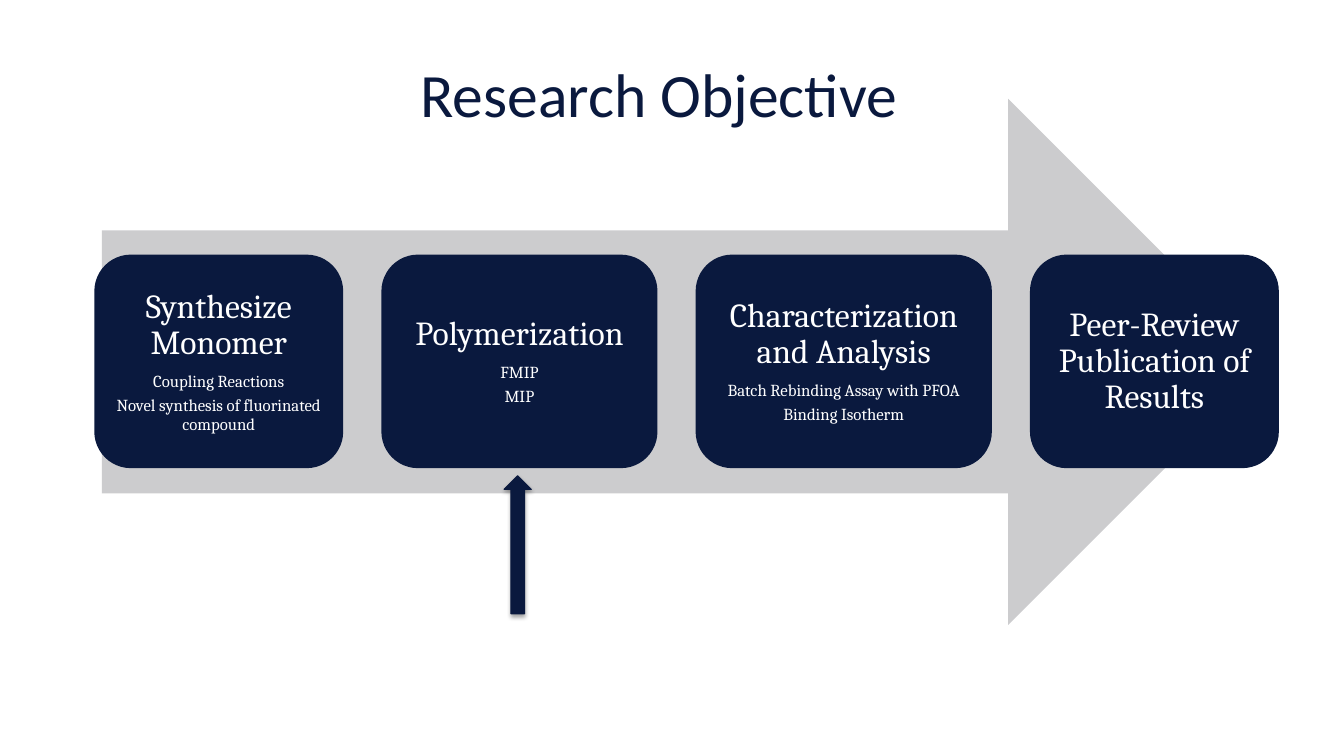
from lxml import etree
from pptx import Presentation
from pptx import util as u
from pptx.dml.color import RGBColor
from pptx.enum import shapes, text
from pptx.oxml.ns import qn

NAVY = "0A193E"
GREY = "CCCCCE"
WHITE = "FFFFFF"

STAGES = [
    (2.44, "Synthesize Monomer",
     ["Coupling Reactions", "Novel synthesis of fluorinated compound"]),
    (2.71, "Polymerization", ["FMIP", "MIP"]),
    (2.91, "Characterization and Analysis",
     ["Batch Rebinding Assay with PFOA", "Binding Isotherm"]),
    (2.44, "Peer-Review Publication of Results", []),
]


def color(value):
    return RGBColor.from_string(value)


def add_filled(slide, preset, box, fill, line_width=None):
    part = slide.shapes.add_shape(preset, *map(u.Inches, box))
    part.shadow.inherit = False
    part.fill.solid()
    part.fill.fore_color.rgb = color(fill)
    if line_width is None:
        part.line.fill.background()
    else:
        part.line.color.rgb = color(fill)
        part.line.width = u.Pt(line_width)
    return part


def set_type(paragraph, face, size, ink):
    paragraph.alignment = text.PP_ALIGN.CENTER
    paragraph.font.name = face
    paragraph.font.size = u.Pt(size)
    paragraph.font.color.rgb = color(ink)


def add_title(slide, box, wording):
    title = slide.shapes.add_textbox(*map(u.Inches, box)).text_frame
    title.word_wrap = True
    title.vertical_anchor = text.MSO_ANCHOR.MIDDLE
    title.text = wording
    set_type(title.paragraphs[0], "Calibri", 44, NAVY)


def add_stage(slide, box, heading, details):
    stage = add_filled(slide, shapes.MSO_SHAPE.ROUNDED_RECTANGLE, box, NAVY, 2)
    frame = stage.text_frame
    frame.word_wrap = True
    frame.vertical_anchor = text.MSO_ANCHOR.MIDDLE
    frame.margin_left = frame.margin_right = u.Inches(0.1)
    frame.margin_top = frame.margin_bottom = u.Inches(0.1)
    frame.text = "\n".join([heading, *details])
    for index, paragraph in enumerate(frame.paragraphs):
        size = 12 if index else 24
        paragraph.line_spacing = 0.9
        paragraph.space_after = u.Pt(size * 0.35)
        set_type(paragraph, "Cambria", size, WHITE)


def add_process(slide, box):
    left, top, width, height = box
    add_filled(slide, shapes.MSO_SHAPE.RIGHT_ARROW,
               (left + 0.06, top - 1.56, 11.6, 5.22), GREY)
    gap = (width - sum(stage[0] for stage in STAGES)) / (len(STAGES) - 1)
    for stage_width, heading, details in STAGES:
        add_stage(slide, (left, top, stage_width, height), heading, details)
        left += stage_width + gap


def add_progress_marker(slide, box):
    marker = add_filled(slide, shapes.MSO_SHAPE.UP_ARROW, box, NAVY, 0.75)
    effects = marker.element.spPr.find(qn("a:effectLst"))
    shade = etree.SubElement(
        effects, qn("a:outerShdw"), blurRad=str(u.Pt(3.1)),
        dist=str(u.Pt(1.8)), dir="5400000", rotWithShape="0")
    tint = etree.SubElement(shade, qn("a:srgbClr"), val="000000")
    etree.SubElement(tint, qn("a:alpha"), val="35000")


def main():
    deck = Presentation()
    deck.slide_width = u.Inches(13.33)
    deck.slide_height = u.Inches(7.5)
    slide = deck.slides.add_slide(deck.slide_layouts[6])
    add_title(slide, (0.67, 0.3, 12, 1.25), "Research Objective\t")
    add_process(slide, (0.95, 2.54, 11.72, 2.09))
    add_progress_marker(slide, (5, 4.72, 0.27, 1.37))
    deck.save("out.pptx")


if __name__ == "__main__":
    main()
